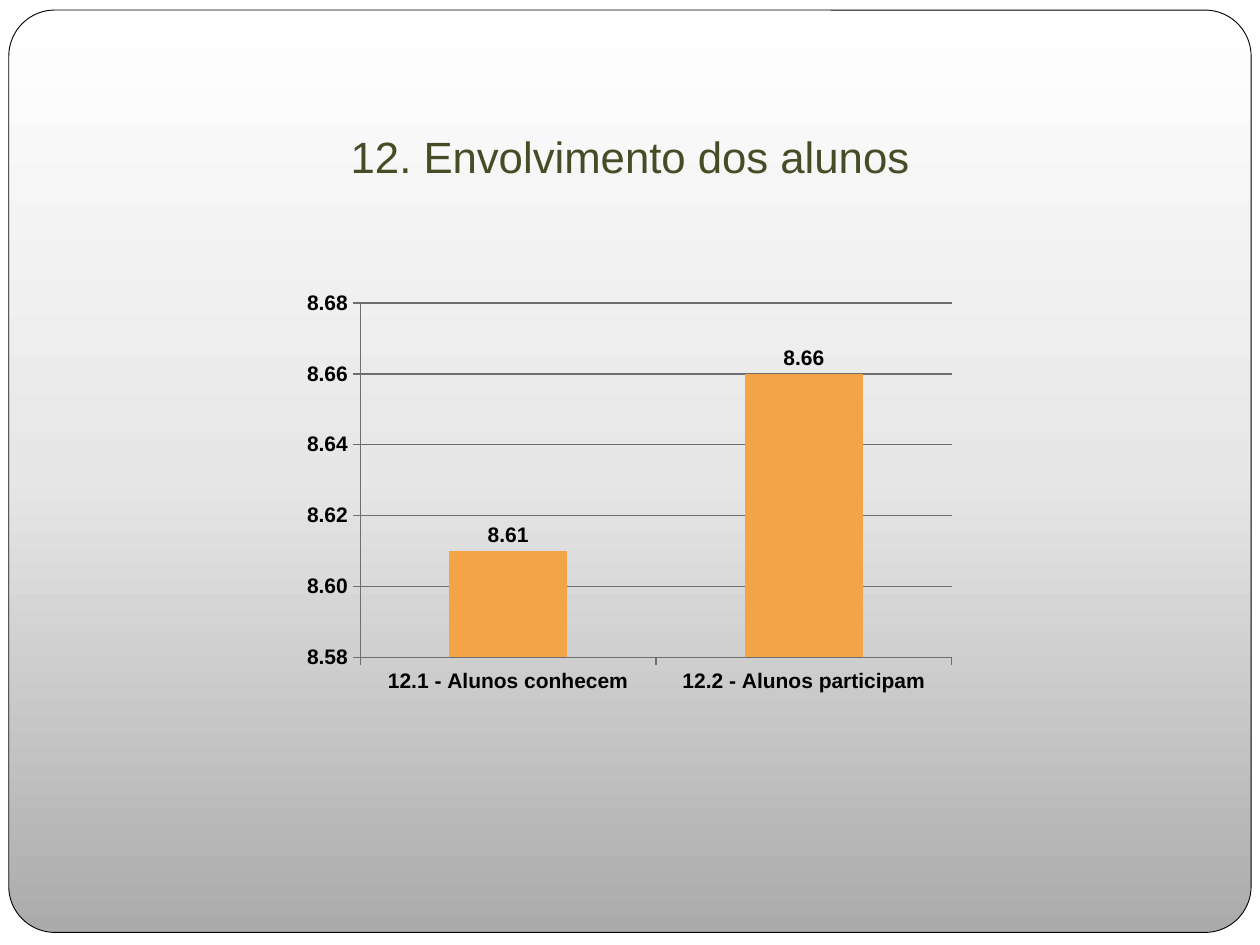
from lxml import etree
from pptx import Presentation
from pptx.chart.data import CategoryChartData
from pptx.dml.color import RGBColor
from pptx.enum.chart import XL_CHART_TYPE, XL_LABEL_POSITION, XL_TICK_MARK
from pptx.enum.shapes import MSO_SHAPE
from pptx.enum.text import MSO_ANCHOR, PP_ALIGN
from pptx.oxml.ns import qn
from pptx.util import Inches, Pt

RECTANGLE = MSO_SHAPE.RECTANGLE
ROUNDED = MSO_SHAPE.ROUNDED_RECTANGLE
COLUMNS = XL_CHART_TYPE.COLUMN_CLUSTERED
OUTSIDE_END = XL_LABEL_POSITION.OUTSIDE_END
TICK_OUTSIDE = XL_TICK_MARK.OUTSIDE
BOTTOM = MSO_ANCHOR.BOTTOM
CENTER = PP_ALIGN.CENTER

FONT = "Arial"
NUMBER_FORMAT = "0.00"
AXIS_COLOR = "6E6E6E"
PANEL_STOPS = [(0, "ABABAB"), (50, "E7E7E7"), (100, "FFFFFF")]
SCORES = {"12.1 - Alunos conhecem": 8.61, "12.2 - Alunos participam": 8.66}


def color(value):
    """Return the colour for a hex string."""
    return RGBColor.from_string(value)


def inches(box):
    """Turn a left, top, width, height box into lengths."""
    return [Inches(length) for length in box]


def set_gradient(fill, stops, angle):
    """Give a fill a linear gradient with any number of stops."""
    fill.gradient()
    fill.gradient_angle = angle
    stop_list = fill.gradient_stops[0]._gs.getparent()
    for stop in list(stop_list):
        stop_list.remove(stop)
    for percent, value in stops:
        stop = etree.SubElement(stop_list, qn("a:gs"), pos=str(percent * 1000))
        etree.SubElement(stop, qn("a:srgbClr"), val=value)


def add_backdrop(page, page_box, panel_box):
    """Place the white page and the rounded gradient panel."""
    sheet = page.shapes.add_shape(RECTANGLE, *inches(page_box))
    sheet.shadow.inherit = False
    sheet.fill.solid()
    sheet.fill.fore_color.rgb = color("FFFFFF")
    sheet.line.fill.background()
    panel = page.shapes.add_shape(ROUNDED, *inches(panel_box))
    panel.shadow.inherit = False
    panel.adjustments[0] = 0.05
    set_gradient(panel.fill, PANEL_STOPS, 90)
    panel.line.color.rgb = color("000000")
    panel.line.width = Pt(0.5)


def add_title(page, box, text):
    """Place the centred slide title."""
    frame = page.shapes.add_textbox(*inches(box)).text_frame
    frame.word_wrap = True
    frame.vertical_anchor = BOTTOM
    frame.margin_bottom = Inches(0.1)
    para = frame.paragraphs[0]
    para.alignment = CENTER
    span = para.add_run()
    span.text = text
    span.font.name = FONT
    span.font.size = Pt(25)
    span.font.color.rgb = color("444D26")


def style_line(line):
    """Draw a chart line thin and grey."""
    line.color.rgb = color(AXIS_COLOR)
    line.width = Pt(0.75)


def add_score_chart(page, box, scores):
    """Place the column chart of student involvement."""
    data = CategoryChartData(number_format=NUMBER_FORMAT)
    data.categories = list(scores)
    data.add_series("Series 1", list(scores.values()))
    chart = page.shapes.add_chart(COLUMNS, *inches(box), data).chart
    chart.has_legend = False
    chart.has_title = False
    chart.font.name = FONT
    chart.font.size = Pt(12)
    chart.font.bold = True
    chart.font.color.rgb = color("000000")

    for axis in (chart.category_axis, chart.value_axis):
        axis.major_tick_mark = TICK_OUTSIDE
        style_line(axis.format.line)
    values = chart.value_axis
    values.minimum_scale, values.maximum_scale = 8.58, 8.68
    values.major_unit = 0.02
    values.has_major_gridlines = True
    style_line(values.major_gridlines.format.line)
    values.tick_labels.number_format = NUMBER_FORMAT
    values.tick_labels.number_format_is_linked = False

    plot = chart.plots[0]
    plot.vary_by_categories = False
    plot.gap_width = 150
    series = plot.series[0]
    series.format.fill.solid()
    series.format.fill.fore_color.rgb = color("F3A447")
    labels = series.data_labels
    labels.show_value = True
    labels.position = OUTSIDE_END
    labels.number_format = NUMBER_FORMAT
    labels.number_format_is_linked = False


def main():
    """Build the slide and save the deck."""
    deck = Presentation()
    deck.slide_width, deck.slide_height = Inches(10), Inches(7.5)
    page = deck.slides.add_slide(deck.slide_layouts[6])
    add_backdrop(page, (0, 0, 10, 7.5), (0.07, 0.08, 9.86, 7.32))
    add_title(page, (0.5, 0.3, 9, 1.25), "12. Envolvimento dos alunos")
    add_score_chart(page, (2.33, 2.25, 5.33, 3.31), SCORES)
    deck.save("out.pptx")


if __name__ == "__main__":
    main()
